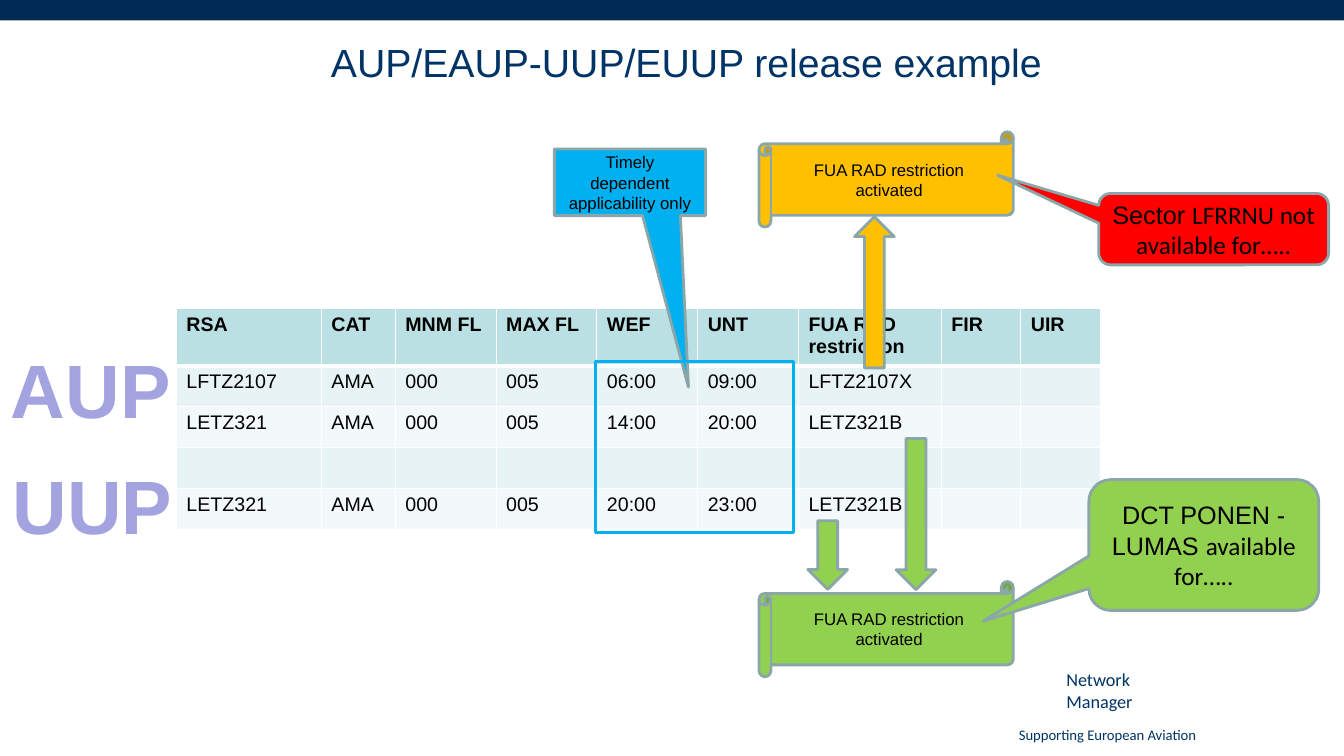
from dataclasses import dataclass
from typing import Optional

from lxml.etree import SubElement as Sub
from pptx import Presentation
from pptx.dml.color import RGBColor as Rgb
from pptx.enum.shapes import MSO_SHAPE as Kind
from pptx.enum.text import MSO_ANCHOR as Anchor, MSO_AUTO_SIZE as Auto, PP_ALIGN as Align
from pptx.oxml.ns import qn
from pptx.util import Pt

HUES = {
    "navy": "002A54", "ink": "003366", "black": "000000", "white": "FFFFFF",
    "head": "BBE0E3", "odd": "E7F3F4", "even": "F3F9FA", "edge": "8AA6A8",
    "gold": "FFC000", "red": "FF0000", "green": "92D050", "blue": "00B0F0",
    "lilac": "A3A3E0",
}

Box = tuple[float, float, float, float]


@dataclass
class Part:
    kind: Kind
    box: Box
    fill: Optional[str]
    text: str = ""
    tail: str = ""  # closing words, set in Calibri
    size: float = 12
    adj: tuple[float, ...] = ()
    turn: float = 0
    line: Optional[str] = "edge"


@dataclass
class Label:
    text: str
    box: Box
    size: float
    face: str
    hue: str
    bold: bool = False
    wrap: bool = True
    align: Align = Align.LEFT


def color(name: str) -> Rgb:
    return Rgb.from_string(HUES[name])


def style(font, size: float, hue: str, face: str = "Arial", bold: bool = False) -> None:
    font.name, font.size, font.bold = face, Pt(size), bold
    font.color.rgb = color(hue)


def place(box: Box) -> list[Pt]:
    return [Pt(n) for n in box]


def draw_part(slide, part: Part) -> None:
    shape = slide.shapes.add_shape(part.kind, *place(part.box))
    shape.shadow.inherit = False
    shape.rotation = part.turn
    for i, val in enumerate(part.adj):
        shape.adjustments[i] = val
    if part.fill:
        shape.fill.solid()
        shape.fill.fore_color.rgb = color(part.fill)
    else:
        shape.fill.background()
    if part.line:
        shape.line.color.rgb = color(part.line)
        shape.line.width = Pt(2)
    else:
        shape.line.fill.background()
    if part.text:
        frame = shape.text_frame
        frame.word_wrap = True
        frame.vertical_anchor = Anchor.MIDDLE
        frame.text = part.text
        para = frame.paragraphs[0]
        para.alignment = Align.CENTER
        style(para.runs[0].font, part.size, "black")
        if part.tail:
            run = para.add_run()
            run.text = part.tail
            style(run.font, part.size, "black", "Calibri")


def draw_label(slide, label: Label) -> None:
    frame = slide.shapes.add_textbox(*place(label.box)).text_frame
    frame.word_wrap = label.wrap
    frame.auto_size = Auto.SHAPE_TO_FIT_TEXT
    frame.text = label.text
    para = frame.paragraphs[0]
    para.alignment = label.align
    style(para.runs[0].font, label.size, label.hue, label.face, label.bold)


def add_edge(cell, tag: str, width: float) -> None:
    line = Sub(cell._tc.get_or_add_tcPr(), qn(tag), w=str(Pt(width)))
    Sub(Sub(line, qn("a:solidFill")), qn("a:srgbClr"), val=HUES["white"])


def draw_table(slide, rows: list[list[str]], wide: list[float], tall: list[float]) -> None:
    box = (126, 220.32, sum(wide), sum(tall))
    table = slide.shapes.add_table(len(rows), len(wide), *place(box)).table
    for col, width in zip(table.columns, wide):
        col.width = Pt(width)
    for r, (row, high) in enumerate(zip(rows, tall)):
        table.rows[r].height = Pt(high)
        for c, text in enumerate(row):
            cell = table.cell(r, c)
            add_edge(cell, "a:lnL", 1)
            add_edge(cell, "a:lnR", 1)
            add_edge(cell, "a:lnT", 3 if r == 1 else 1)
            add_edge(cell, "a:lnB", 3 if r == 0 else 1)
            cell.fill.solid()
            cell.fill.fore_color.rgb = color("head" if r == 0 else "odd" if r % 2 else "even")
            cell.text = text
            style(cell.text_frame.paragraphs[0].font, 14, "black", bold=r == 0)
            for run in cell.text_frame.paragraphs[0].runs:
                style(run.font, 14, "black", bold=r == 0)


ROWS = [
    ["RSA", "CAT", "MNM FL", "MAX FL", "WEF", "UNT", "FUA RAD restriction", "FIR", "UIR"],
    ["LFTZ2107", "AMA", "000", "005", "06:00", "09:00", "LFTZ2107X", "", ""],
    ["LETZ321", "AMA", "000", "005", "14:00", "20:00", "LETZ321B", "", ""],
    [""] * 9,
    ["LETZ321", "AMA", "000", "005", "20:00", "23:00", "LETZ321B", "", ""],
]
WIDE = [103.6, 52.8, 72, 72, 72, 72, 102, 56.8, 56.8]
TALL = [41] + [29.2] * 4

ACTIVE = "FUA RAD restriction activated"
BAR = Part(Kind.RECTANGLE, (0, 0, 960, 14.6), "navy", line=None)
PARTS = [
    # Restriction switched on by the AUP
    Part(Kind.UP_ARROW, (610.4, 154.8, 28.4, 108), "gold"),
    Part(Kind.HORIZONTAL_SCROLL, (542.2, 94.2, 181.6, 68), "gold", ACTIVE),
    Part(Kind.ROUNDED_RECTANGULAR_CALLOUT, (784.8, 138.2, 164.2, 51), "red",
         "Sector ", "LFRRNU not available for…..", 18, (-0.94, -0.755, 0.167)),
    # Restriction released by the UUP
    Part(Kind.HORIZONTAL_SCROLL, (542.2, 415.4, 181.6, 68), "green", ACTIVE),
    Part(Kind.UP_ARROW, (640.1, 313.2, 28.4, 108), "green", turn=180),
    Part(Kind.ROUNDED_RECTANGULAR_CALLOUT, (777.8, 342.6, 164.2, 93.4), "green",
         "DCT PONEN - LUMAS ", "available for…..", 18, (-0.96, 0.582, 0.167)),
    Part(Kind.UP_ARROW, (577, 372, 28.4, 49), "green", turn=180),
    # Time window
    Part(Kind.RECTANGULAR_CALLOUT, (396, 106.4, 108, 47.6), "blue",
         "Timely dependent applicability only", adj=(0.387, 3.074)),
    Part(Kind.RECTANGLE, (425.6, 258.4, 141, 121.8), None, line="blue"),
]
LABELS = [
    Label("Network Manager", (754.6, 473.8, 64.8, 38.9), 13, "Calibri", "ink"),
    Label("Supporting European Aviation", (720.7, 514.8, 146.9, 20.9), 10.5, "Calibri", "ink"),
    Label("AUP", (0, 241.2, 129.6, 72.7), 54, "Arial", "lilac", True, False, Align.CENTER),
    Label("UUP", (1.4, 324, 129.6, 72.7), 54, "Arial", "lilac", True, False, Align.CENTER),
]


def main() -> None:
    deck = Presentation()
    deck.slide_width, deck.slide_height = Pt(960), Pt(540)
    slide = deck.slides.add_slide(deck.slide_layouts[5])

    # Title
    title = slide.shapes.title
    title.left, title.top, title.width, title.height = place((168, 23.8, 644.4, 70.6))
    frame = title.text_frame
    frame.text = "AUP/EAUP-UUP/EUUP release example"
    frame.vertical_anchor = Anchor.TOP
    frame.paragraphs[0].alignment = Align.CENTER
    style(frame.paragraphs[0].runs[0].font, 28, "ink")

    # Body, from back to front
    draw_part(slide, BAR)
    draw_table(slide, ROWS, WIDE, TALL)
    for label in LABELS:
        draw_label(slide, label)
    for part in PARTS:
        draw_part(slide, part)
    deck.save("out.pptx")


if __name__ == "__main__":
    main()
